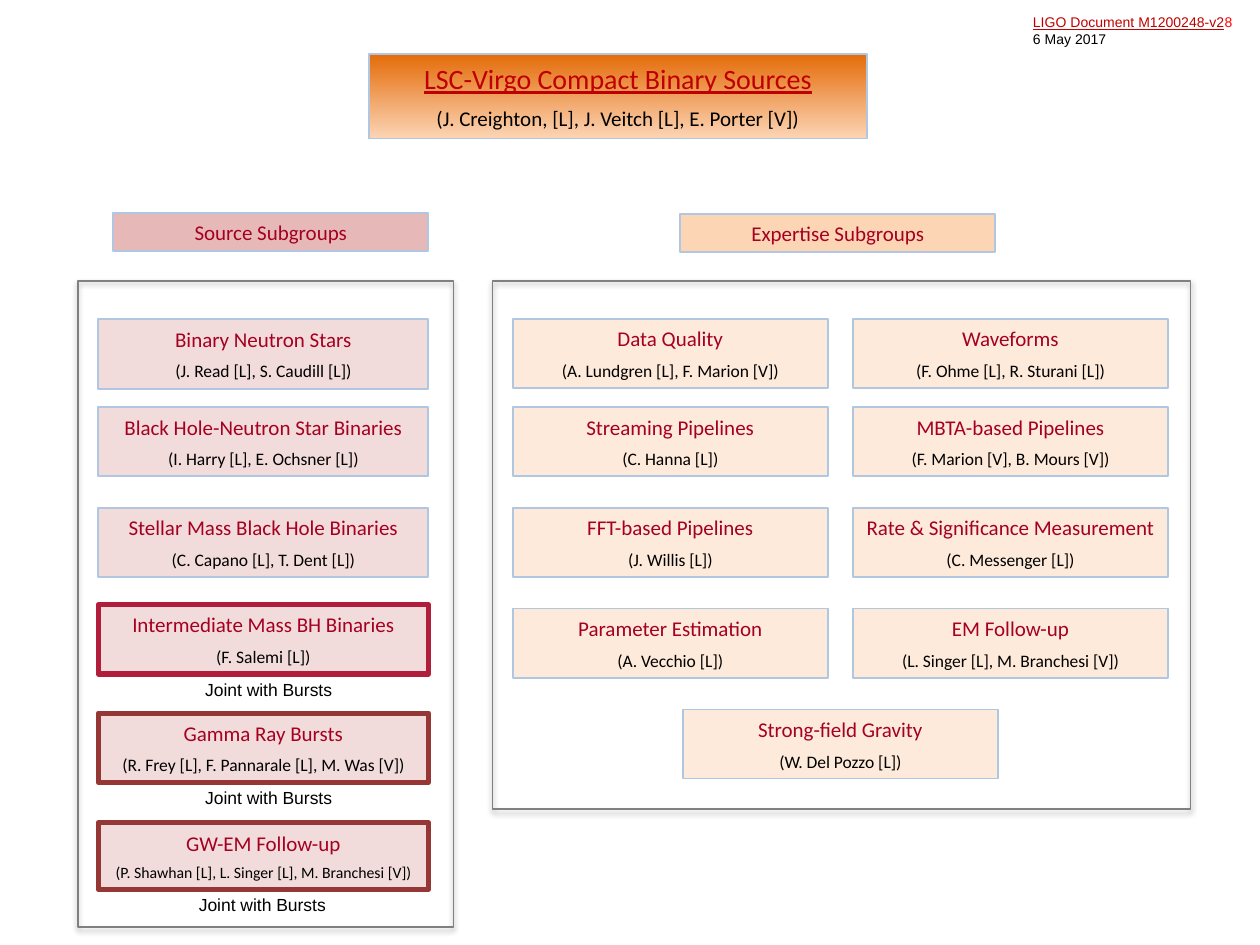
import pptx
import pptx.util
import pptx.dml.color
import pptx.enum.shapes
import pptx.enum.text
import pptx.oxml
from pptx.util import Inches

HEX = {
    "black": "000000", "head": "A50021", "title": "C00000", "new": "FF0000",
    "edge": "B0C6E1", "frame": "808080", "joint": "B01E3B", "burst": "953735",
    "rose": "E6B9B8", "pink": "F2DCDB", "peach": "FCD5B5", "cream": "FDEADA",
    "orange": "E46C0A",
}

ROWS = [2.53, 3.23, 4.03, 4.83]
SOURCES = [  # top, height, name, chairs, chair size, edge, edge width
    (2.53, 0.56, "Binary Neutron Stars", "(J. Read [L], S. Caudill [L])", 10, "edge", 1),
    (3.23, 0.55, "Black Hole-Neutron Star Binaries", "(I. Harry [L], E. Ochsner [L])", 10, "edge", 1),
    (4.03, 0.55, "Stellar Mass Black Hole Binaries", "(C. Capano [L], T. Dent [L])", 10, "edge", 1),
    (4.8, 0.55, "Intermediate Mass BH Binaries", "(F. Salemi [L])", 10, "joint", 3),
    (5.66, 0.55, "Gamma Ray Bursts", "(R. Frey [L], F. Pannarale [L], M. Was [V])", 10, "burst", 3),
    (6.53, 0.53, "GW-EM Follow-up", "(P. Shawhan [L], L. Singer [L], M. Branchesi [V])", 9, "burst", 3),
]
SKILLS = {  # left edge of column: groups from top to bottom
    4.07: [
        ("Data Quality", "(A. Lundgren [L], F. Marion [V])"),
        ("Streaming Pipelines", "(C. Hanna [L])"),
        ("FFT-based Pipelines", "(J. Willis [L])"),
        ("Parameter Estimation", "(A. Vecchio [L])"),
    ],
    6.77: [
        ("Waveforms", "(F. Ohme [L], R. Sturani [L])"),
        ("MBTA-based Pipelines", "(F. Marion [V], B. Mours [V])"),
        ("Rate & Significance Measurement", "(C. Messenger [L])"),
        ("EM Follow-up", "(L. Singer [L], M. Branchesi [V])"),
    ],
}
SHADOW = (
    '<a:effectLst xmlns:a="http://schemas.openxmlformats.org/drawingml/2006/main">'
    '<a:outerShdw blurRad="39370" dist="22860" dir="5400000" rotWithShape="0">'
    '<a:srgbClr val="000000"><a:alpha val="35000"/></a:srgbClr>'
    '</a:outerShdw></a:effectLst>'
)


def tint(name):
    return pptx.dml.color.RGBColor.from_string(HEX[name])


def style(run, size, color, face="Calibri", under=False):
    run.font.size = pptx.util.Pt(size)
    run.font.name = face
    run.font.color.rgb = tint(color)
    run.font.underline = under


def rect(slide, area, edge="edge", width=1):
    shape = slide.shapes.add_shape(
        pptx.enum.shapes.MSO_SHAPE.RECTANGLE, *map(Inches, area))
    shape.shadow.inherit = False
    shape.line.color.rgb = tint(edge)
    shape.line.width = pptx.util.Pt(width)
    return shape


def box(slide, area, fill, lines, edge="edge", width=1):
    """Filled box; lines holds (text, size, color, underline)."""
    shape = rect(slide, area, edge, width)
    shape.fill.solid()
    shape.fill.fore_color.rgb = tint(fill)
    frame = shape.text_frame
    frame.word_wrap = True
    frame.vertical_anchor = pptx.enum.text.MSO_ANCHOR.MIDDLE
    frame.text = "\n".join(line[0] for line in lines)
    for i, (para, line) in enumerate(zip(frame.paragraphs, lines)):
        _, size, color, under = line
        para.alignment = pptx.enum.text.PP_ALIGN.CENTER
        if i:
            para.space_before = pptx.util.Pt(size / 2)
        style(para.runs[0], size, color, under=under)
    return shape


def group(slide, area, fill, name, chairs, size=10, edge="edge", width=1):
    lines = [(name, 12, "head", False), (chairs, size, "black", False)]
    box(slide, area, fill, lines, edge, width)


def panel(slide, area):
    shape = rect(slide, area, "frame")
    shape.fill.background()
    props = shape.element.spPr
    old = props.find(pptx.oxml.ns.qn("a:effectLst"))
    props.replace(old, pptx.oxml.parse_xml(SHADOW))


def label(slide, area, text, size, wrap=False):
    shape = slide.shapes.add_textbox(*map(Inches, area))
    frame = shape.text_frame
    frame.word_wrap = wrap
    frame.text = text
    for para in frame.paragraphs:
        style(para.runs[0], size, "black", "Arial")
    return frame


def main():
    deck = pptx.Presentation()
    deck.slide_width, deck.slide_height = Inches(10), Inches(7.5)
    slide = deck.slides.add_slide(deck.slide_layouts[6])

    # Document number and date
    frame = label(slide, (8.1, 0.06, 1.84, 0.37),
                  "LIGO Document M1200248-v2\n6 May 2017", 8, True)
    first = frame.paragraphs[0]
    style(first.runs[0], 8, "title", "Arial", True)
    last = first.add_run()
    last.text = "8"
    style(last, 8, "new", "Arial")

    # Title
    title = box(slide, (2.93, 0.43, 3.95, 0.67), "orange", [
        ("LSC-Virgo Compact Binary Sources", 16, "title", True),
        ("(J. Creighton, [L], J. Veitch [L], E. Porter [V])", 12, "black", False)])
    title.fill.gradient()
    title.fill.gradient_angle = 270
    for stop, name, place in zip(title.fill.gradient_stops, ("orange", "peach"), (0, 1)):
        stop.color.rgb = tint(name)
        stop.position = place

    # Column headings
    box(slide, (0.9, 1.69, 2.5, 0.3), "rose", [("Source Subgroups", 12, "head", False)])
    box(slide, (5.4, 1.7, 2.5, 0.3), "peach", [("Expertise Subgroups", 12, "head", False)])

    # Source subgroups
    for top, high, *rest in SOURCES:
        group(slide, (0.78, top, 2.62, high), "pink", *rest)

    # Expertise subgroups
    for left, items in SKILLS.items():
        for top, item in zip(ROWS, items):
            group(slide, (left, top, 2.5, 0.55), "cream", *item)
    group(slide, (5.42, 5.63, 2.5, 0.55), "cream", "Strong-field Gravity", "(W. Del Pozzo [L])")

    # Frames around the subgroups
    panel(slide, (0.62, 2.23, 2.98, 5.13))
    panel(slide, (3.91, 2.23, 5.54, 4.19))

    # Notes under the joint groups
    for left, top in ((1.53, 5.34), (1.53, 6.2), (1.48, 7.05)):
        label(slide, (left, top, 1.26, 0.27), "Joint with Bursts", 10)

    deck.save("out.pptx")


if __name__ == "__main__":
    main()
